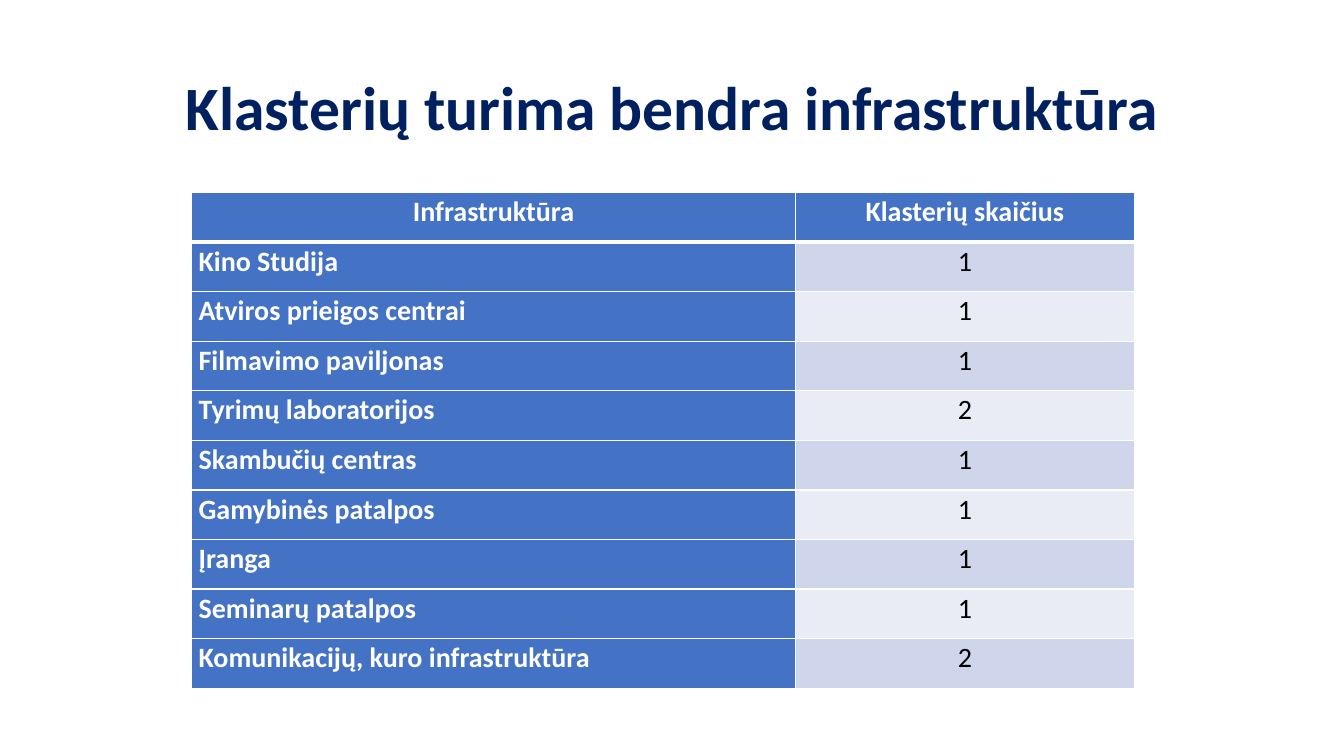
from lxml.etree import SubElement
from pptx import Presentation
from pptx.dml.color import RGBColor
from pptx.enum.text import MSO_ANCHOR as ANCHOR, PP_ALIGN as ALIGN
from pptx.oxml.ns import qn
from pptx.util import Inches, Pt

COLORS = {"navy": "002060", "blue": "4472C4", "band_dark": "CFD5EA",
          "band_light": "E9EBF5", "white": "FFFFFF", "black": "000000"}
ROWS = [
    ("Infrastruktūra", "Klasterių skaičius"),
    ("Kino Studija", "1"),
    ("Atviros prieigos centrai", "1"),
    ("Filmavimo paviljonas", "1"),
    ("Tyrimų laboratorijos", "2"),
    ("Skambučių centras", "1"),
    ("Gamybinės patalpos", "1"),
    ("Įranga", "1"),
    ("Seminarų patalpos", "1"),
    ("Komunikacijų, kuro infrastruktūra", "2"),
]
COL_WIDTHS = (5.99, 3.36)
ROW_HEIGHT = 0.492


def write(p, text, size, color, bold, align, **spacing):
    r = p.add_run()
    r.text = text
    for name, value in {"name": "Calibri", "size": Pt(size), "bold": bold}.items():
        setattr(r.font, name, value)
    r.font.color.rgb = RGBColor.from_string(COLORS[color])
    for name, value in {"alignment": align, **spacing}.items():
        setattr(p, name, value)


def add_border(cell, side, width):
    ln = SubElement(cell._tc.get_or_add_tcPr(), qn(f"a:ln{side}"), w=str(Pt(width)))
    fill = SubElement(ln, qn("a:solidFill"))
    SubElement(fill, qn("a:srgbClr"), val=COLORS["white"])


prs = Presentation()
prs.slide_width, prs.slide_height = Inches(13.33), Inches(7.5)
s = prs.slides.add_slide(prs.slide_layouts[5])

title = s.shapes.title
box = {"left": 0.92, "top": 0.37, "width": 11.5, "height": 1.45}
for name, value in box.items():
    setattr(title, name, Inches(value))
title.text_frame.vertical_anchor = ANCHOR.MIDDLE
write(title.text_frame.paragraphs[0], "Klasterių turima bendra infrastruktūra",
      44, "navy", True, ALIGN.CENTER, line_spacing=0.9)

table = s.shapes.add_table(len(ROWS), len(COL_WIDTHS), Inches(1.9), Inches(1.91),
                           Inches(sum(COL_WIDTHS)), Inches(ROW_HEIGHT * len(ROWS))).table
for column, width in zip(table.columns, COL_WIDTHS):
    column.width = Inches(width)

margins = {"margin_left": 0.07, "margin_right": 0.07, "margin_top": 0, "margin_bottom": 0}
for i, row in enumerate(ROWS):
    table.rows[i].height = Inches(ROW_HEIGHT)
    for j, text in enumerate(row):
        cell = table.cell(i, j)
        for name, value in margins.items():
            setattr(cell, name, Inches(value))
        for side in "LRTB":
            under_header = (i, side) in ((0, "B"), (1, "T"))
            add_border(cell, side, 3 if under_header else 1)
        heading = i == 0 or j == 0
        band = "band_dark" if i % 2 else "band_light"
        cell.fill.solid()
        cell.fill.fore_color.rgb = RGBColor.from_string(COLORS["blue" if heading else band])
        write(cell.text_frame.paragraphs[0], text, 20, "white" if heading else "black",
              heading, ALIGN.LEFT if i and j == 0 else ALIGN.CENTER,
              line_spacing=1.07, space_after=Pt(1.1))

prs.save("out.pptx")
